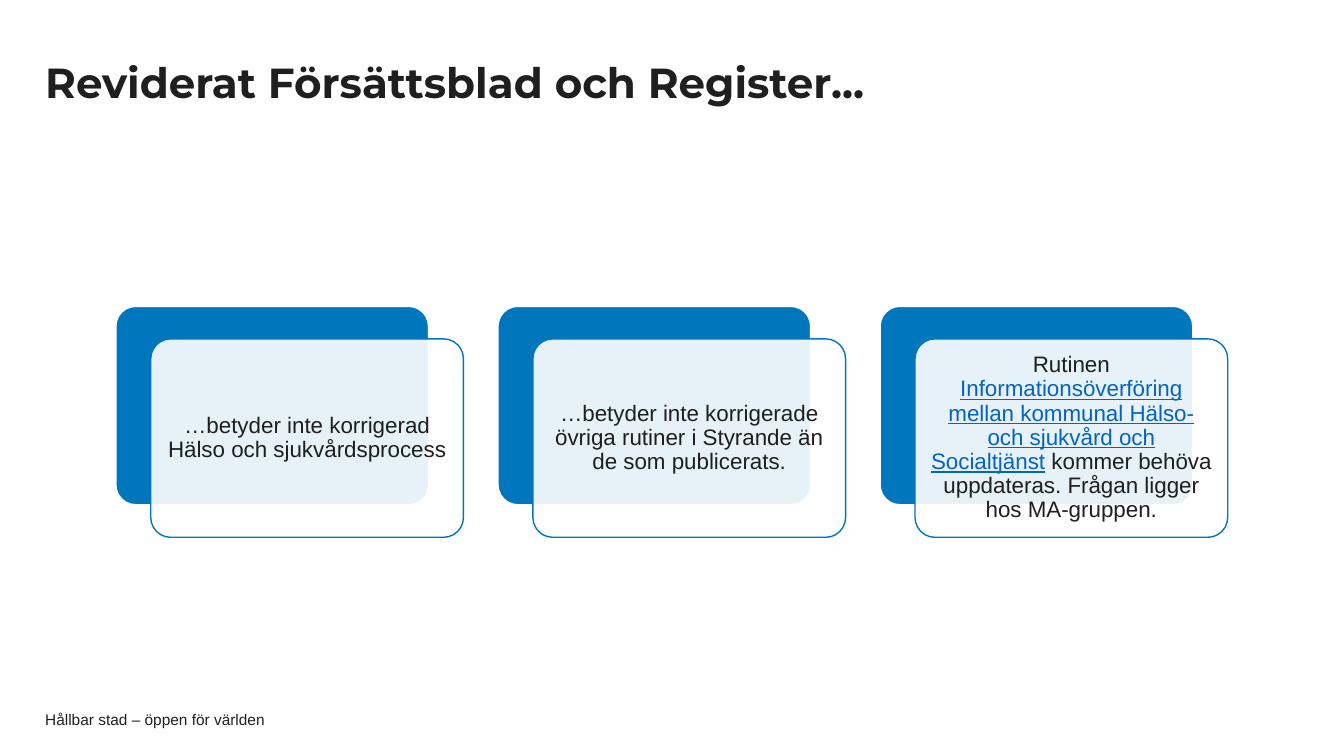
from dataclasses import dataclass

from lxml import etree
from pptx import Presentation
from pptx.dml.color import RGBColor
from pptx.enum.shapes import MSO_SHAPE
from pptx.enum.text import MSO_ANCHOR, MSO_AUTO_SIZE, PP_ALIGN
from pptx.oxml.ns import qn
from pptx.shapes.autoshape import Shape
from pptx.slide import Slide
from pptx.text.text import TextFrame
from pptx.util import Cm, Pt

ROUNDED = MSO_SHAPE.ROUNDED_RECTANGLE
MIDDLE = MSO_ANCHOR.MIDDLE
NO_FIT = MSO_AUTO_SIZE.NONE
LEFT, CENTER = PP_ALIGN.LEFT, PP_ALIGN.CENTER

COLORS = {"ink": "1F1F1F", "blue": "0077BC", "white": "FFFFFF", "link": "0563C1"}

TITLE_FONT = {"name": "Montserrat", "size": Pt(30), "bold": True}
CARD_FONT = {"name": "Arial", "size": Pt(16)}
FOOTER_FONT = {"name": "Arial", "size": Pt(11)}

CARD_LEFT, CARD_TOP, CARD_PITCH = 2.92, 7.72, 9.63
CARD_WIDTH, CARD_HEIGHT = 7.88, 5.0
FRONT_SHIFT_X, FRONT_SHIFT_Y = 0.88, 0.82


@dataclass
class Span:
    text: str
    linked: bool = False


@dataclass
class Card:
    spans: list[Span]


CARDS = [
    Card([Span("…betyder inte korrigerad Hälso och sjukvårdsprocess")]),
    Card([Span("…betyder inte korrigerade övriga rutiner i Styrande än de som publicerats.")]),
    Card([
        Span("Rutinen "),
        Span("Informationsöverföring mellan kommunal Hälso- och sjukvård och Socialtjänst", True),
        Span(" kommer behöva uppdateras. Frågan ligger hos MA-gruppen."),
    ]),
]


def rgb(color: str) -> RGBColor:
    return RGBColor.from_string(COLORS[color])


def write_text(frame: TextFrame, spans: list[Span], font: dict, align: PP_ALIGN,
               spacing: float, inset_x: float, inset_y: float) -> None:
    """Fill a frame with one paragraph, insets in centimetres."""
    frame_format = {
        "word_wrap": True, "auto_size": NO_FIT, "vertical_anchor": MIDDLE,
        "margin_left": Cm(inset_x), "margin_right": Cm(inset_x),
        "margin_top": Cm(inset_y), "margin_bottom": Cm(inset_y),
    }
    for attribute, value in frame_format.items():
        setattr(frame, attribute, value)
    paragraph = frame.paragraphs[0]
    paragraph.alignment = align
    paragraph.line_spacing = spacing
    for span in spans:
        run = paragraph.add_run()
        run.text = span.text
        for attribute, value in font.items():
            setattr(run.font, attribute, value)
        run.font.underline = span.linked
        run.font.color.rgb = rgb("link" if span.linked else "ink")


def add_panel(slide: Slide, left: float, top: float, fill: str, line: str) -> Shape:
    panel = slide.shapes.add_shape(ROUNDED, Cm(left), Cm(top), Cm(CARD_WIDTH), Cm(CARD_HEIGHT))
    panel.adjustments[0] = 0.1
    panel.shadow.inherit = False
    panel.fill.solid()
    panel.fill.fore_color.rgb = rgb(fill)
    panel.line.color.rgb = rgb(line)
    panel.line.width = Pt(1)
    return panel


def set_opacity(panel: Shape, percent: int) -> None:
    fill_color = panel.fill._xPr.find(qn("a:solidFill"))[0]
    etree.SubElement(fill_color, qn("a:alpha"), val=str(percent * 1000))


def add_card(slide: Slide, card: Card, left: float) -> None:
    add_panel(slide, left, CARD_TOP, "blue", "white")
    front = add_panel(slide, left + FRONT_SHIFT_X, CARD_TOP + FRONT_SHIFT_Y, "white", "blue")
    set_opacity(front, 90)
    write_text(front.text_frame, card.spans, CARD_FONT, CENTER, 0.9, 0.18, 0.18)


def add_title(slide: Slide, text: str) -> None:
    title = slide.shapes.title
    title.left, title.top, title.width, title.height = Cm(1.14), Cm(1.12), Cm(25.48), Cm(2.06)
    write_text(title.text_frame, [Span(text)], TITLE_FONT, LEFT, 0.9, 0, 0.13)


def add_footer(slide: Slide, text: str) -> None:
    footer = slide.shapes.add_textbox(Cm(1.14), Cm(17.93), Cm(24), Cm(0.41))
    write_text(footer.text_frame, [Span(text)], FOOTER_FONT, LEFT, 1.0, 0, 0)


def main() -> None:
    presentation = Presentation()
    presentation.slide_width, presentation.slide_height = Cm(33.87), Cm(19.05)
    slide = presentation.slides.add_slide(presentation.slide_layouts[5])
    add_title(slide, "Reviderat Försättsblad och Register...")
    for index, card in enumerate(CARDS):
        add_card(slide, card, CARD_LEFT + index * CARD_PITCH)
    add_footer(slide, "Hållbar stad – öppen för världen")
    presentation.save("out.pptx")


if __name__ == "__main__":
    main()
